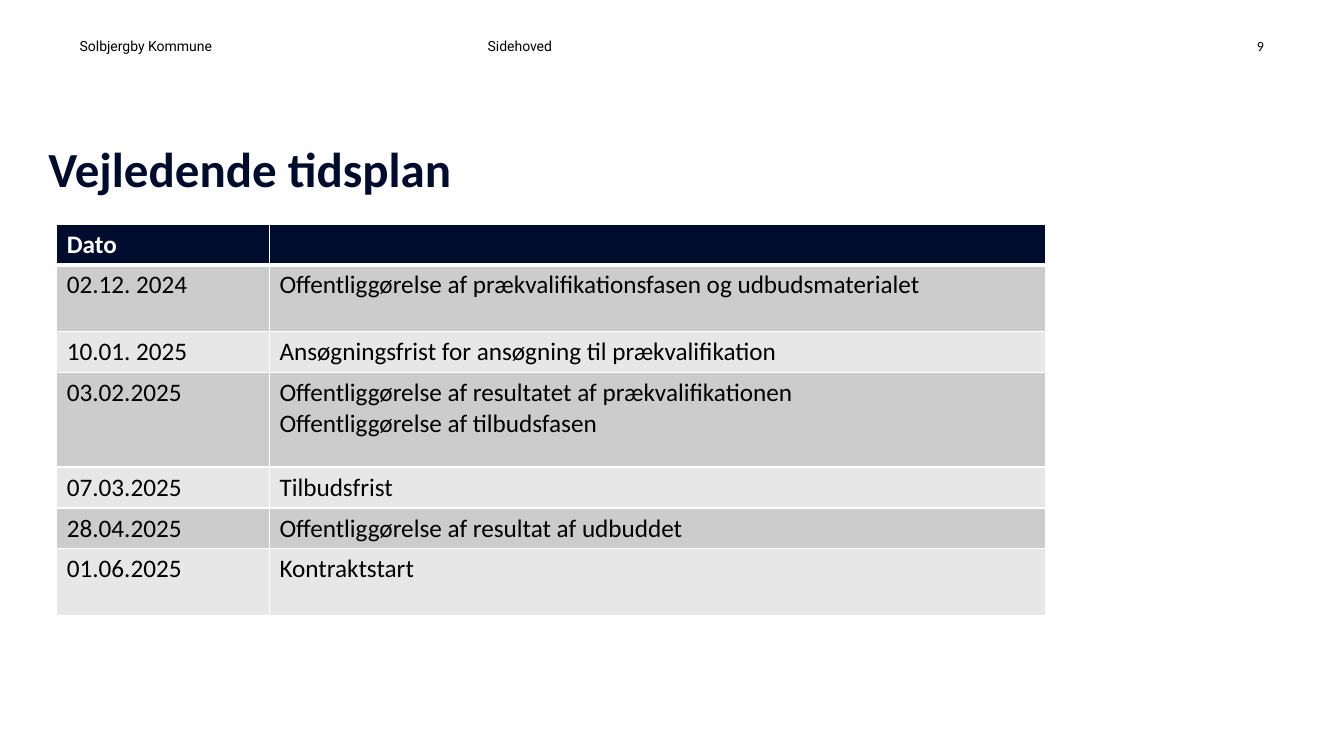
from lxml.etree import SubElement
from pptx import Presentation
from pptx.dml.color import RGBColor
from pptx.enum.text import MSO_ANCHOR, PP_ALIGN
from pptx.oxml.ns import qn
from pptx.util import Cm, Pt

NAVY, WHITE, BLACK = "000C2E", "FFFFFF", "000000"
BANDS = ["CCCCCD", "E7E7E8"]
COLUMN_WIDTHS = [5.36, 19.56]
SCHEDULE = [
    (1.02, "Dato", ""),
    (1.68, "02.12. 2024", "Offentliggørelse af prækvalifikationsfasen og udbudsmaterialet"),
    (1.03, "10.01. 2025", "Ansøgningsfrist for ansøgning til prækvalifikation"),
    (2.39, "03.02.2025", "Offentliggørelse af resultatet af prækvalifikationen\n"
                         "Offentliggørelse af tilbudsfasen"),
    (1.03, "07.03.2025", "Tilbudsfrist"),
    (1.03, "28.04.2025", "Offentliggørelse af resultat af udbuddet"),
    (1.68, "01.06.2025", "Kontraktstart"),
]


def color(hex_string):
    return RGBColor.from_string(hex_string)


def set_attributes(target, values):
    for name, value in values.items():
        setattr(target, name, value)


def style_text(frame, size, hex_color, font="Calibri", bold=False):
    for para in frame.paragraphs:
        for span in para.runs:
            set_attributes(span.font, {"name": font, "size": Pt(size), "bold": bold})
            span.font.color.rgb = color(hex_color)


def add_text(page, text, left, top, width, height, size, hex_color,
             align=PP_ALIGN.LEFT, spacing=1.0, **style):
    box = page.shapes.add_textbox(Cm(left), Cm(top), Cm(width), Cm(height))
    frame = box.text_frame
    set_attributes(frame, {
        "word_wrap": True, "vertical_anchor": MSO_ANCHOR.BOTTOM, "text": text,
        "margin_left": 0, "margin_top": 0, "margin_right": 0, "margin_bottom": 0,
    })
    set_attributes(frame.paragraphs[0], {"alignment": align, "line_spacing": spacing})
    style_text(frame, size, hex_color, **style)


def add_borders(cell, top=1, bottom=1):
    """Draw white cell edges; call before filling, as the lines come first in the XML."""
    properties = cell._tc.get_or_add_tcPr()
    for edge, width in {"lnL": 1, "lnR": 1, "lnT": top, "lnB": bottom}.items():
        line = SubElement(properties, qn(f"a:{edge}"), w=str(Pt(width)))
        SubElement(SubElement(line, qn("a:solidFill")), qn("a:srgbClr"), val=WHITE)


def add_schedule(page, left, top):
    width, height = sum(COLUMN_WIDTHS), sum(row[0] for row in SCHEDULE)
    table = page.shapes.add_table(len(SCHEDULE), len(COLUMN_WIDTHS), Cm(left), Cm(top),
                                  Cm(width), Cm(height)).table
    for column, column_width in zip(table.columns, COLUMN_WIDTHS):
        column.width = Cm(column_width)
    for index, (row_height, *texts) in enumerate(SCHEDULE):
        header = index == 0
        table.rows[index].height = Cm(row_height)
        for cell, text in zip(table.rows[index].cells, texts):
            add_borders(cell, top=3 if index == 1 else 1, bottom=3 if header else 1)
            cell.fill.solid()
            cell.fill.fore_color.rgb = color(NAVY if header else BANDS[(index - 1) % 2])
            cell.text = text
            style_text(cell.text_frame, 18, WHITE if header else BLACK, bold=header)


def main():
    deck = Presentation()
    set_attributes(deck, {"slide_width": Cm(33.87), "slide_height": Cm(19.05)})
    page = deck.slides.add_slide(deck.slide_layouts[6])
    add_text(page, "Solbjergby Kommune", 2.01, 0.86, 9.78, 0.51, 10, BLACK, font="Roboto")
    add_text(page, "Sidehoved", 12.29, 0.86, 11.38, 0.51, 10, BLACK, font="Roboto")
    add_text(page, "9", 30.76, 0.86, 1.09, 0.51, 10, BLACK, align=PP_ALIGN.RIGHT)
    add_text(page, "Vejledende tidsplan", 1.22, 2.49, 30.63, 2.49, 35, NAVY,
             spacing=0.83, bold=True)
    add_schedule(page, 1.43, 5.65)
    deck.save("out.pptx")


if __name__ == "__main__":
    main()
